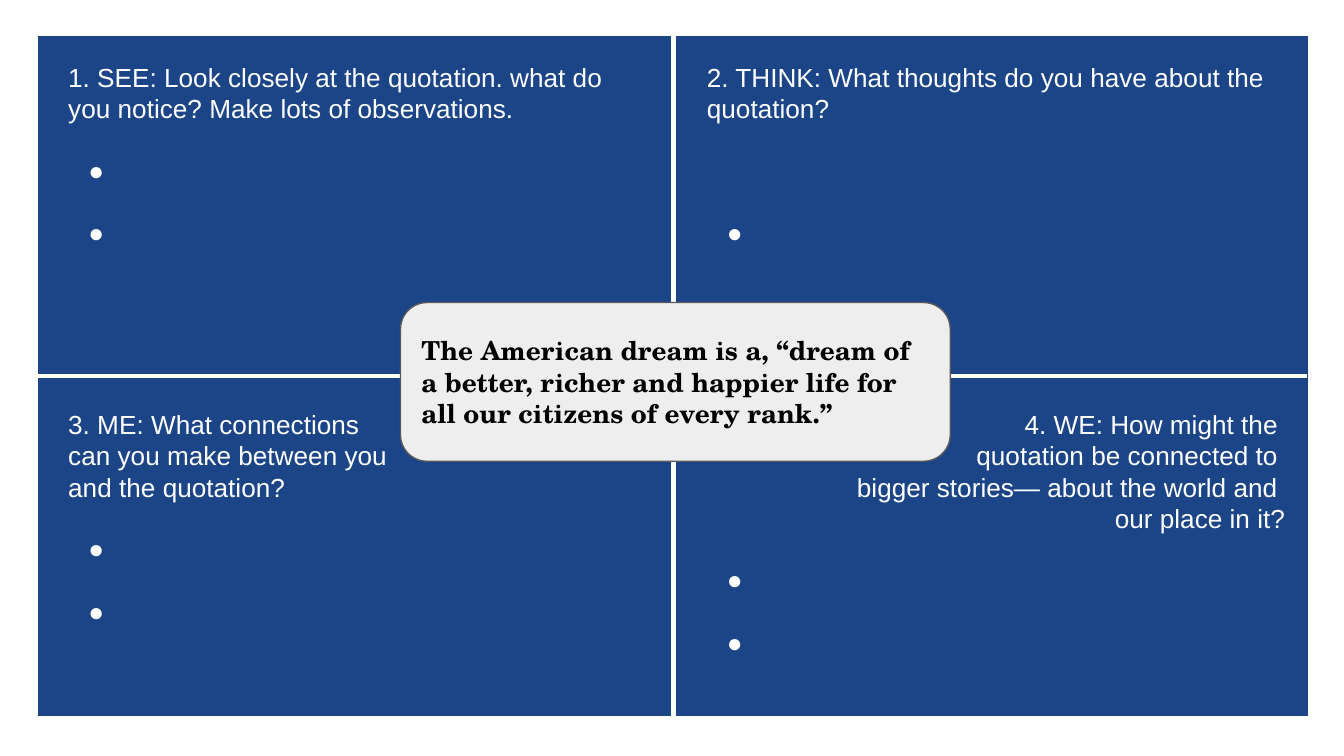
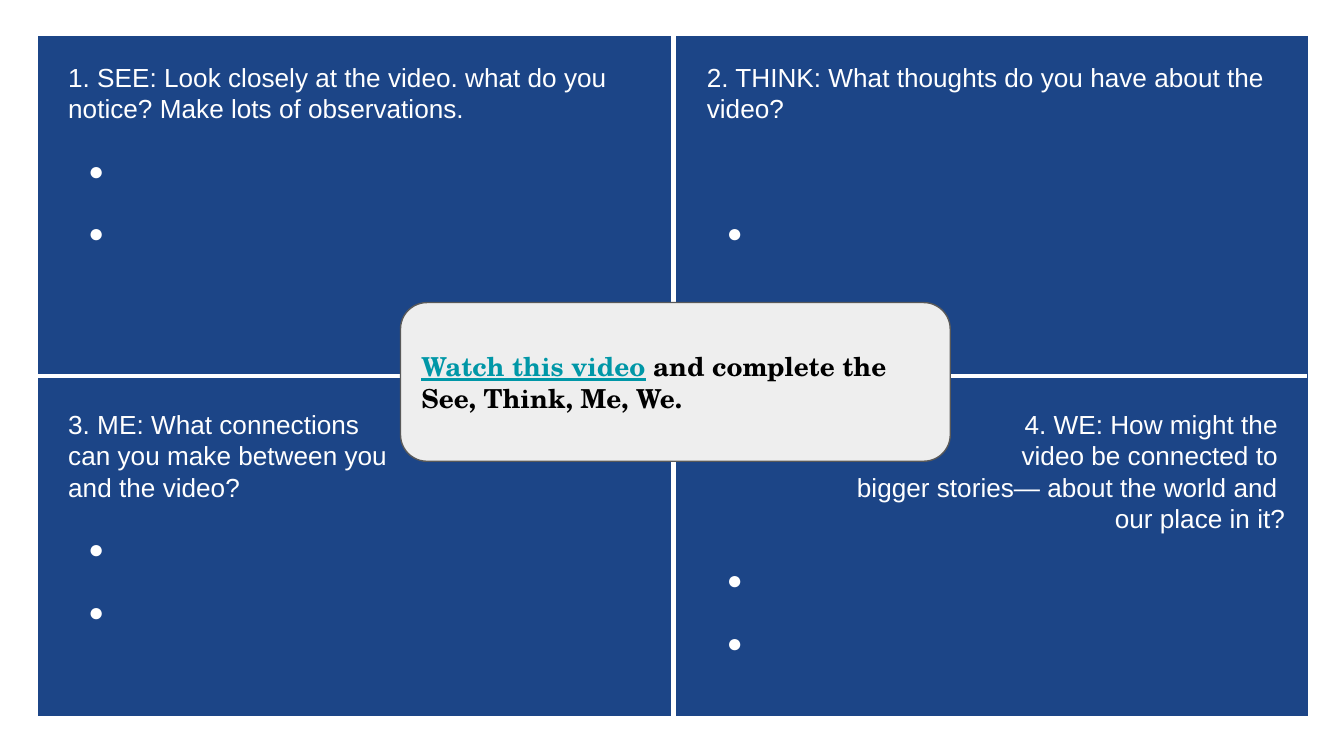
from lxml import etree
from pptx import Presentation
from pptx.dml.color import RGBColor
from pptx.enum.shapes import MSO_CONNECTOR, MSO_SHAPE
from pptx.enum.text import MSO_ANCHOR, MSO_AUTO_SIZE, PP_ALIGN
from pptx.oxml.ns import qn
from pptx.util import Cm, Pt

RECTANGLE, ROUNDED = MSO_SHAPE.RECTANGLE, MSO_SHAPE.ROUNDED_RECTANGLE
STRAIGHT = MSO_CONNECTOR.STRAIGHT
LEFT, RIGHT = PP_ALIGN.LEFT, PP_ALIGN.RIGHT

BLUE = RGBColor(0x1C, 0x45, 0x87)
WHITE = RGBColor(0xFF, 0xFF, 0xFF)
BLACK = RGBColor(0, 0, 0)
PALE = RGBColor(0xEE, 0xEE, 0xEE)
GREY = RGBColor(0x59, 0x59, 0x59)
TEAL = RGBColor(0x00, 0x97, 0xA7)

PROMPT_STYLE = {"name": "Arial", "size": Pt(14)}
CENTRE_STYLE = {"name": "TeX Gyre Schola", "size": Pt(14), "bold": True}

# Content: topic, and the centre text as (words, colour, underlined)
PAGES = [
    ("quotation", [("The American dream is a, “dream of a better, richer and "
                    "happier life for all our citizens of every rank.”", BLACK, False)]),
    ("video", [("Watch this video", TEAL, True),
               (" and complete the See, Think, Me, We.", BLACK, False)]),
]

# Prompts by quadrant: lines, alignment, bullets, gap before bullets (pt), height (cm)
PROMPTS = [
    (["1. SEE: Look closely at the {}. what do you notice? Make lots of observations."],
     LEFT, 2, 0, 4.7),
    (["2. THINK: What thoughts do you have about the {}?"], LEFT, 1, 33.5, 4.7),
    (["3. ME: What connections", "can you make between you", "and the {}?"],
     LEFT, 2, 0, 5.31),
    (["4. WE: How might the ", "{} be connected to ",
      "bigger stories— about the world and ", "our place in it?"], RIGHT, 2, 0, 5.89),
]

# Layout in centimetres
PANEL = (0.71, 0.66, 24.03, 12.88)
DIVIDERS = [(12.73, 0.66, 12.73, 13.56), (0.71, 7.11, 24.71, 7.11)]
CENTRE = (7.57, 5.72, 10.39, 3)
COLUMNS, ROWS, PROMPT_WIDTH = (1.04, 13.11), (0.91, 7.47), 11.43
INSET = 0.25


def add_span(para, words, colour, style):
    span = para.add_run()
    span.text = words
    for name, value in style.items():
        setattr(span.font, name, value)
    span.font.color.rgb = colour


def set_frame(frame, **settings):
    for side in ("left", "top", "right", "bottom"):
        setattr(frame, f"margin_{side}", Cm(INSET))
    frame.word_wrap = True
    for name, value in settings.items():
        setattr(frame, name, value)


def add_panel(page, kind, place, fill, line):
    box = page.shapes.add_shape(kind, *map(Cm, place))
    box.shadow.inherit = False
    box.fill.solid()
    box.fill.fore_color.rgb = fill
    box.line.color.rgb = line
    box.line.width = Pt(0.75)
    return box


def add_divider(page, ends):
    line = page.shapes.add_connector(STRAIGHT, *map(Cm, ends))
    line.line.color.rgb = WHITE
    line.line.width = Pt(2.25)
    etree.SubElement(line._element.spPr, qn("a:effectLst"))


def add_bullet(frame, gap):
    para = frame.add_paragraph()
    properties = para._p.get_or_add_pPr()
    properties.set("marL", str(Cm(1.27)))
    properties.set("indent", str(Cm(-0.89)))
    colour = etree.SubElement(properties, qn("a:buClr"))
    etree.SubElement(colour, qn("a:srgbClr"), val=str(WHITE))
    etree.SubElement(properties, qn("a:buFont"), typeface="Arial")
    etree.SubElement(properties, qn("a:buChar"), char="●")
    para.line_spacing = 2.0
    para.space_before = Pt(gap)
    add_span(para, " ", WHITE, PROMPT_STYLE)


def add_prompt(page, index, topic):
    lines, alignment, bullets, gap, height = PROMPTS[index]
    row, column = divmod(index, 2)
    place = (COLUMNS[column], ROWS[row], PROMPT_WIDTH, height)
    frame = page.shapes.add_textbox(*map(Cm, place)).text_frame
    set_frame(frame, auto_size=MSO_AUTO_SIZE.SHAPE_TO_FIT_TEXT)
    for number, words in enumerate(lines):
        para = frame.add_paragraph() if number else frame.paragraphs[0]
        para.alignment = alignment
        add_span(para, words.format(topic), WHITE, PROMPT_STYLE)
    for number in range(bullets):
        add_bullet(frame, 0 if number else gap)


def add_page(deck, topic, centre_text):
    page = deck.slides.add_slide(deck.slide_layouts[6])

    # Blue panel split into quadrants
    add_panel(page, RECTANGLE, PANEL, BLUE, WHITE)
    for ends in DIVIDERS:
        add_divider(page, ends)

    # Centre card
    card = add_panel(page, ROUNDED, CENTRE, PALE, GREY)
    set_frame(card.text_frame, vertical_anchor=MSO_ANCHOR.MIDDLE)
    para = card.text_frame.paragraphs[0]
    para.alignment = LEFT
    for words, colour, underlined in centre_text:
        add_span(para, words, colour, {**CENTRE_STYLE, "underline": underlined})

    # Prompts
    for index in range(len(PROMPTS)):
        add_prompt(page, index, topic)


def main():
    deck = Presentation()
    deck.slide_width, deck.slide_height = Cm(25.4), Cm(14.29)
    for topic, centre_text in PAGES:
        add_page(deck, topic, centre_text)
    deck.save("out.pptx")


if __name__ == "__main__":
    main()
